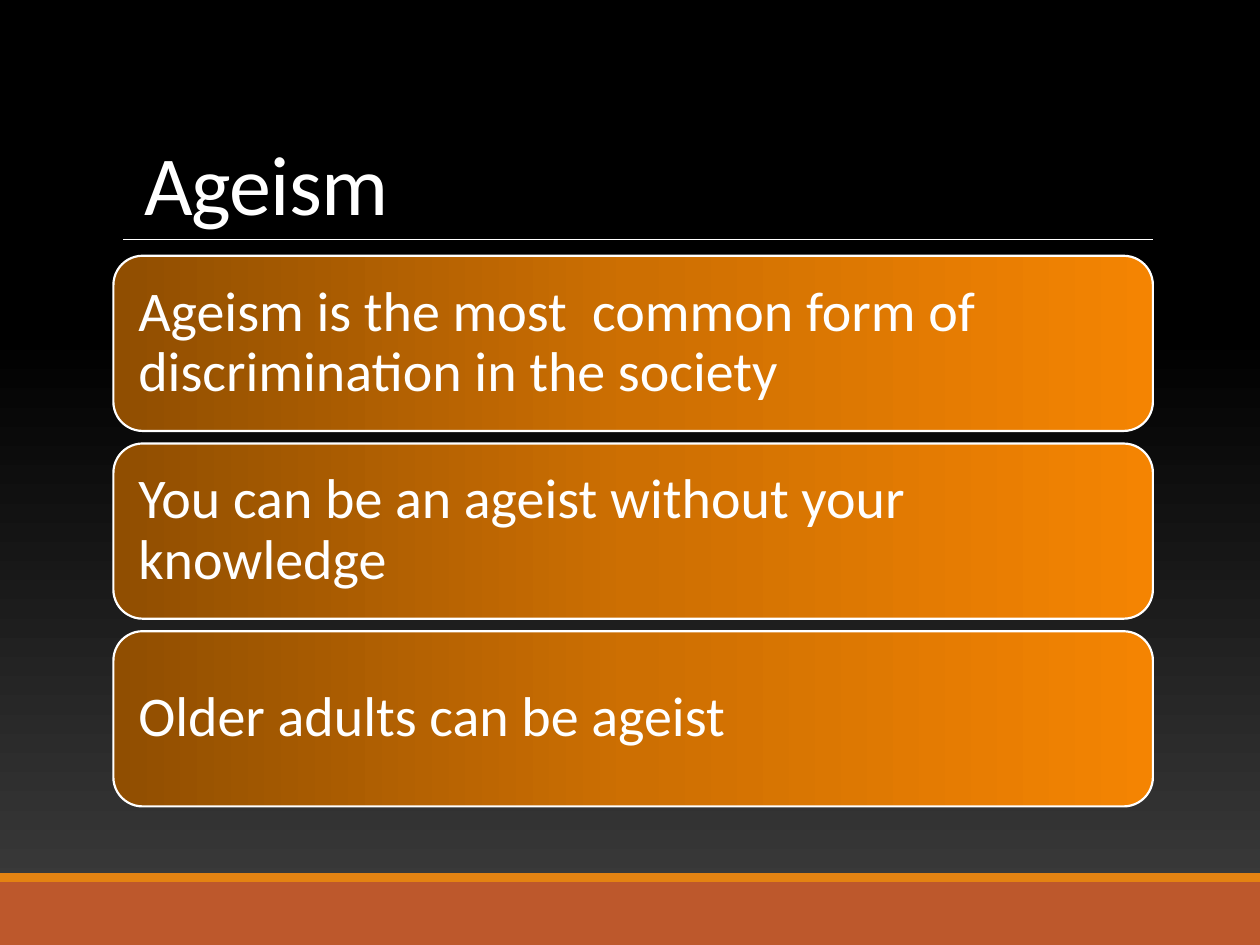
import copy
import dataclasses

import pptx
import pptx.dml.color
import pptx.enum.shapes
import pptx.enum.text
import pptx.oxml.ns
import pptx.util

Inches = pptx.util.Inches
Pt = pptx.util.Pt
qn = pptx.oxml.ns.qn
Shape = pptx.enum.shapes.MSO_SHAPE
Anchor = pptx.enum.text.MSO_ANCHOR


@dataclasses.dataclass(frozen=True)
class Theme:
    font: str = "Calibri"
    title_size: float = 48
    card_size: float = 32
    text: str = "FFFFFF"
    footer: str = "BD582C"
    stripe: str = "E48312"
    backdrop: tuple = ((0, "3F3F3F"), (65, "000000"), (100, "000000"))
    card: tuple = ((0, "904E01"), (50, "CD6F02"), (100, "F48402"))


def rgb(value):
    return pptx.dml.color.RGBColor.from_string(value)


def apply(target, values):
    for name, value in values.items():
        setattr(target, name, value)


class SlideBuilder:
    def __init__(self, slide, theme):
        self.slide = slide
        self.theme = theme

    def gradient(self, fill, owner, stops, angle):
        """Fill with a linear gradient; owner is the XML element holding it."""
        fill.gradient()
        fill.gradient_angle = angle
        stop_list = next(owner.iter(qn("a:gsLst")))
        while len(stop_list) < len(stops):
            stop_list.append(copy.deepcopy(stop_list[0]))
        for stop, (position, color) in zip(fill.gradient_stops, stops):
            stop.color.rgb = rgb(color)
            stop.position = position / 100

    def background(self):
        self.gradient(self.slide.background.fill, self.slide.element,
                      self.theme.backdrop, 90)

    def set_text(self, shape, text, size, line_spacing, anchor, margins):
        frame = shape.text_frame
        apply(frame, {"text": text, "word_wrap": True, "vertical_anchor": anchor,
                      "auto_size": pptx.enum.text.MSO_AUTO_SIZE.NONE, **margins})
        paragraph = frame.paragraphs[0]
        apply(paragraph, {"alignment": pptx.enum.text.PP_ALIGN.LEFT,
                          "line_spacing": line_spacing})
        run = paragraph.runs[0]
        apply(run.font, {"name": self.theme.font, "size": Pt(size)})
        run.font.color.rgb = rgb(self.theme.text)
        return run

    def title(self, text, left, top, width, height):
        heading = self.slide.shapes.title
        apply(heading, {"left": Inches(left), "top": Inches(top),
                        "width": Inches(width), "height": Inches(height)})
        run = self.set_text(heading, text, self.theme.title_size, 0.85,
                            Anchor.BOTTOM, {})
        run.font._element.set("spc", "-50")

    def shape(self, kind, left, top, width, height):
        shape = self.slide.shapes.add_shape(
            kind, Inches(left), Inches(top), Inches(width), Inches(height))
        shape.shadow.inherit = False
        return shape

    def band(self, color, top, height):
        band = self.shape(Shape.RECTANGLE, 0, top, 10, height)
        band.fill.solid()
        band.fill.fore_color.rgb = rgb(color)
        band.line.fill.background()

    def rule(self, left, right, y):
        rule = self.slide.shapes.add_connector(
            pptx.enum.shapes.MSO_CONNECTOR.STRAIGHT,
            Inches(left), Inches(y), Inches(right), Inches(y))
        rule.line.color.rgb = rgb(self.theme.text)
        rule.line.width = Pt(0.5)
        properties = rule._element.spPr
        properties.append(properties.makeelement(qn("a:effectLst"), {}))

    def card(self, text, left, top, width, height):
        card = self.shape(Shape.ROUNDED_RECTANGLE, left, top, width, height)
        self.gradient(card.fill, card._element, self.theme.card, 0)
        card.line.color.rgb = rgb(self.theme.text)
        card.line.width = Pt(1.25)
        margins = {f"margin_{side}": Inches(0.13)
                   for side in ("left", "top", "right", "bottom")}
        self.set_text(card, text, self.theme.card_size, 0.9, Anchor.MIDDLE,
                      margins)


def main():
    deck = pptx.Presentation()
    apply(deck, {"slide_width": Inches(10), "slide_height": Inches(7.5)})
    theme = Theme()
    builder = SlideBuilder(deck.slides.add_slide(deck.slide_layouts[5]), theme)

    # Backdrop and footer bands
    builder.background()
    builder.band(theme.footer, 7, 0.5)
    builder.band(theme.stripe, 6.93, 0.07)

    # Heading with its rule
    builder.rule(0.98, 9.15, 1.9)
    builder.title(" Ageism", 0.9, 0.31, 8.25, 1.59)

    # Statement cards, evenly stacked
    statements = (
        "Ageism is the most  common form of discrimination in the society",
        "You can be an ageist without your knowledge",
        "Older adults can be ageist",
    )
    card_height, gap = 1.39, 0.1
    for row, statement in enumerate(statements):
        builder.card(statement, 0.9, 2.03 + row * (card_height + gap),
                     8.25, card_height)

    deck.save("out.pptx")


if __name__ == "__main__":
    main()
